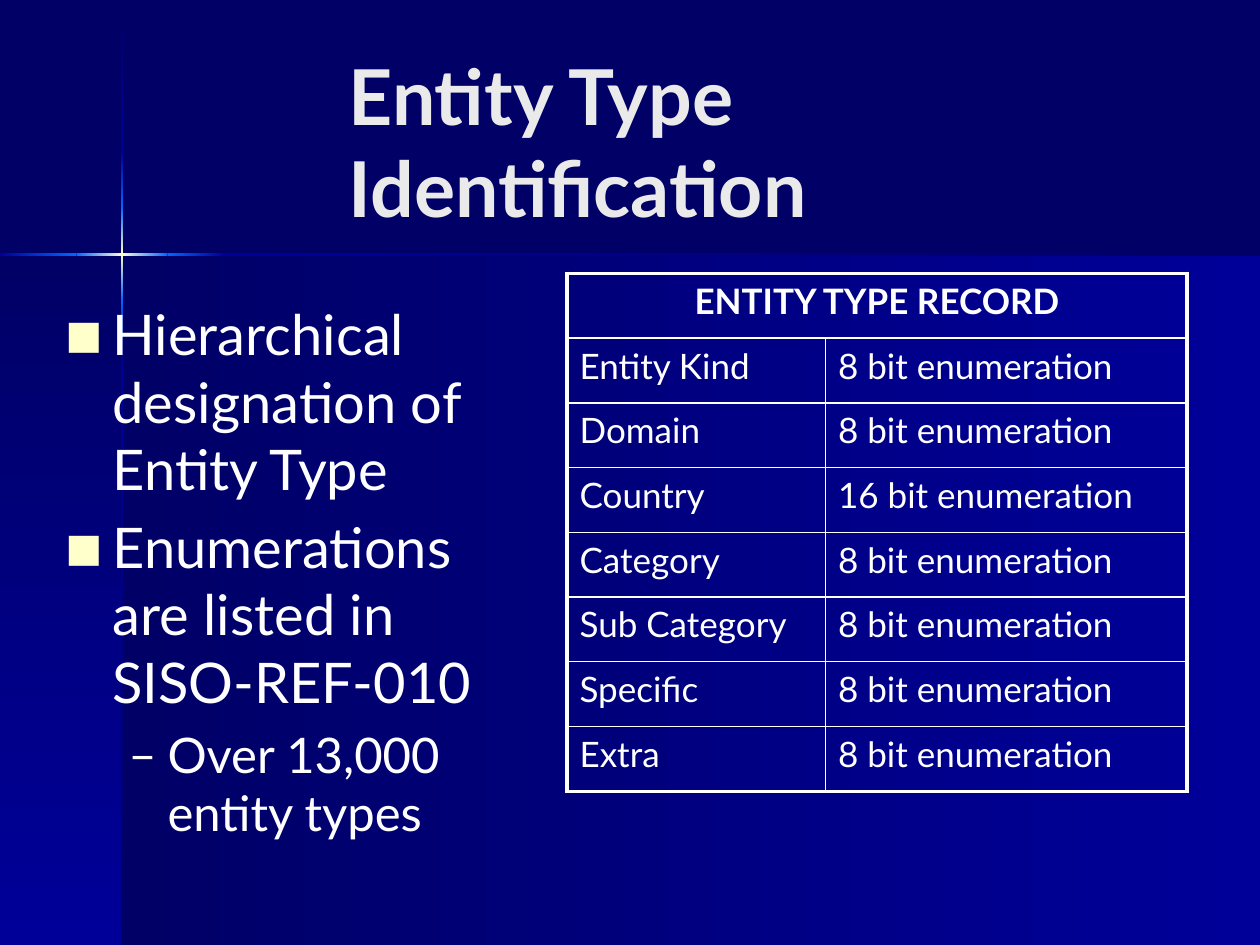
import itertools

import pptx
import pptx.dml.color
import pptx.enum.shapes
import pptx.enum.text
import pptx.oxml.ns
import pptx.util
from lxml import etree

Cm = pptx.util.Cm
qn = pptx.oxml.ns.qn
ALIGN = pptx.enum.text.PP_ALIGN

WIDTH, HEIGHT = 25.4, 19.05
FONT = "Lato"
DARK, BLUE, BRIGHT, GLOW = "000066", "000099", "0066FF", "FFFFCC"
WHITE, TITLE_COLOR = "FFFFFF", "EAEAEA"

TITLE = "Entity Type Identification"
BULLETS = [
    ("Hierarchical designation of Entity Type", 0),
    ("Enumerations are listed in SISO-REF-010", 0),
    ("Over 13,000 entity types", 1),
]
LEVELS = [
    dict(size=32, bullet="■", bullet_color=GLOW, bullet_size=70, left=0.95, hanging=0.95),
    dict(size=28, bullet="–", bullet_color=WHITE, bullet_size=100, left=2.06, hanging=0.79),
]
TABLE_HEADING = "ENTITY TYPE RECORD"
FIELDS = [
    ("Entity Kind", 8),
    ("Domain", 8),
    ("Country", 16),
    ("Category", 8),
    ("Sub Category", 8),
    ("Specific", 8),
    ("Extra", 8),
]
COLUMN_WIDTHS = [5.21, 7.29]
ROW_HEIGHT = 1.305
THICK, THIN = 2.25, 1

CROSS_X, CROSS_Y = 2.46, 5.13
BEAM = 0.05
BEAM_COLORS = [(DARK, BLUE), (BLUE, BRIGHT), (BRIGHT, GLOW, BRIGHT), (BRIGHT, BLUE), (BLUE, DARK)]
VERTICAL_BREAKS = [0.03, 3.07, 4.19, 6.05, 7.16, HEIGHT]
HORIZONTAL_BREAKS = [0, 1.54, 3.38, 4.5, WIDTH]


def rgb(value):
    return pptx.dml.color.RGBColor.from_string(value)


def add_color(parent, value):
    solid = etree.SubElement(parent, qn("a:solidFill"))
    etree.SubElement(solid, qn("a:srgbClr"), val=value)


def add_gradient(slide, left, top, width, height, colors, angle):
    shape = slide.shapes.add_shape(
        pptx.enum.shapes.MSO_SHAPE.RECTANGLE, Cm(left), Cm(top), Cm(width), Cm(height)
    )
    shape.shadow.inherit = False
    shape.line.fill.background()
    shape.fill.gradient()
    shape.fill.gradient_angle = -angle % 360
    stops = shape.fill.gradient_stops
    first, last = stops[0], stops[1]
    for stop, color, position in ((first, colors[0], 0), (last, colors[-1], 1)):
        stop.color.rgb = rgb(color)
        stop.position = position
    if len(colors) == 3:
        stop_list = shape.element.spPr.find(".//" + qn("a:gsLst"))
        middle = etree.Element(qn("a:gs"), pos="50000")
        etree.SubElement(middle, qn("a:srgbClr"), val=colors[1])
        stop_list.insert(1, middle)


def write(paragraph, text, size=20, color=WHITE, bold=False, align=ALIGN.LEFT, space=0,
          bullet=None, bullet_color=WHITE, bullet_size=100, left=0, hanging=0):
    paragraph.alignment = align
    paragraph.space_before = pptx.util.Pt(space)
    if bullet:
        properties = paragraph._p.get_or_add_pPr()
        properties.set("marL", str(Cm(left)))
        properties.set("indent", str(-Cm(hanging)))
        bullet_paint = etree.SubElement(properties, qn("a:buClr"))
        etree.SubElement(bullet_paint, qn("a:srgbClr"), val=bullet_color)
        etree.SubElement(properties, qn("a:buSzPct"), val=str(bullet_size * 1000))
        etree.SubElement(properties, qn("a:buFont"), typeface=FONT)
        etree.SubElement(properties, qn("a:buChar"), char=bullet)
    run = paragraph.add_run()
    run.text = text
    run.font.name = FONT
    run.font.size = pptx.util.Pt(size)
    run.font.bold = bold
    run.font.color.rgb = rgb(color)


def add_text_frame(slide, left, top, width, height):
    frame = slide.shapes.add_textbox(Cm(left), Cm(top), Cm(width), Cm(height)).text_frame
    frame.word_wrap = True
    return frame


def set_borders(cell, **widths):
    properties = cell._tc.get_or_add_tcPr()
    for side in "LRTB":
        line = etree.SubElement(
            properties, qn("a:ln" + side), w=str(pptx.util.Pt(widths[side]))
        )
        add_color(line, WHITE)


def add_backdrop(slide):
    slide.background.fill.solid()
    slide.background.fill.fore_color.rgb = rgb(DARK)
    panel_height = HEIGHT - CROSS_Y
    add_gradient(slide, CROSS_X, CROSS_Y, WIDTH - CROSS_X, panel_height, (DARK, BLUE), 0)
    add_gradient(slide, 0, CROSS_Y, CROSS_X, panel_height, (DARK, BLUE), 90)
    for (start, end), colors in zip(itertools.pairwise(VERTICAL_BREAKS), BEAM_COLORS):
        add_gradient(slide, CROSS_X - BEAM / 2, start, BEAM, end - start, colors, 90)
    for (start, end), colors in zip(itertools.pairwise(HORIZONTAL_BREAKS), BEAM_COLORS[1:]):
        add_gradient(slide, start, CROSS_Y - BEAM / 2, end - start, BEAM, colors, 0)


def add_record_table(slide):
    rows = [(TABLE_HEADING, "")] + [(name, f"{bits} bit enumeration") for name, bits in FIELDS]
    table = slide.shapes.add_table(
        len(rows), 2, Cm(11.43), Cm(5.51), Cm(sum(COLUMN_WIDTHS)), Cm(ROW_HEIGHT * len(rows))
    ).table
    table.first_row = False
    table.horz_banding = False
    for column, width in zip(table.columns, COLUMN_WIDTHS):
        column.width = Cm(width)
    table.cell(0, 0).merge(table.cell(0, 1))
    for row_index, row in enumerate(rows):
        heading = row_index == 0
        table.rows[row_index].height = Cm(ROW_HEIGHT)
        for column_index, text in enumerate(row):
            cell = table.cell(row_index, column_index)
            set_borders(
                cell,
                L=THIN if column_index else THICK,
                R=THICK if column_index or heading else THIN,
                T=THICK if heading else THIN,
                B=THICK if row_index == len(rows) - 1 else THIN,
            )
            cell.fill.background()
            if text:
                write(cell.text_frame.paragraphs[0], text, bold=heading,
                      align=ALIGN.CENTER if heading else ALIGN.LEFT)


def main():
    presentation = pptx.Presentation()
    presentation.slide_width, presentation.slide_height = Cm(WIDTH), Cm(HEIGHT)
    slide = presentation.slides.add_slide(presentation.slide_layouts[6])
    add_backdrop(slide)

    title = add_text_frame(slide, 6.78, 0.84, 17.78, 3.99)
    title.vertical_anchor = pptx.enum.text.MSO_ANCHOR.MIDDLE
    title.margin_right = Cm(0.6)
    write(title.paragraphs[0], TITLE, size=44, color=TITLE_COLOR, bold=True)

    add_record_table(slide)

    body = add_text_frame(slide, 1.07, 5.92, 9.96, 11.43)
    for index, (text, level) in enumerate(BULLETS):
        paragraph = body.add_paragraph() if index else body.paragraphs[0]
        paragraph.level = level
        style = LEVELS[level]
        write(paragraph, text, space=style["size"] * 0.2 if index else 0, **style)

    presentation.save("out.pptx")


if __name__ == "__main__":
    main()
